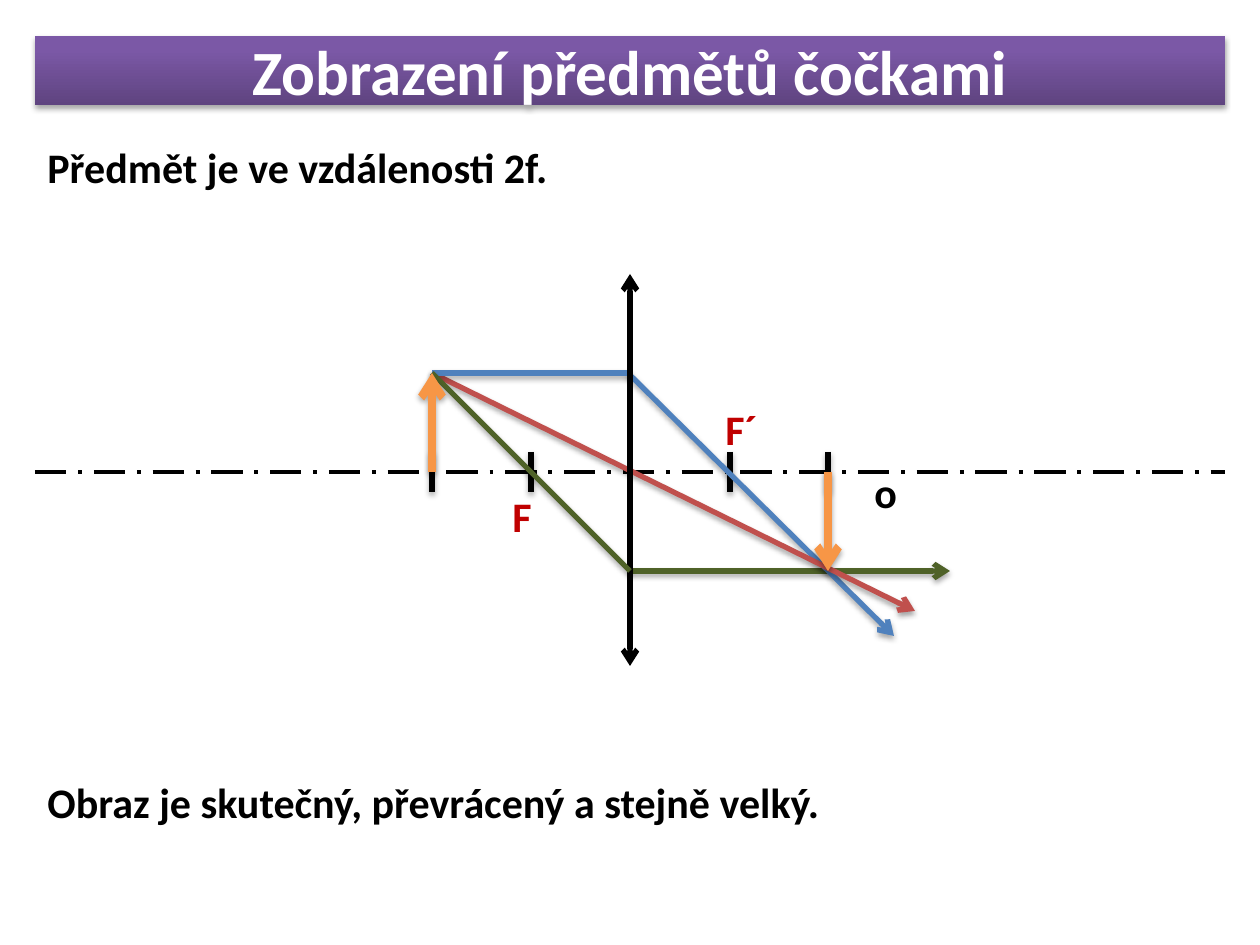
from lxml import etree
from pptx import Presentation, util as u
from pptx.dml.color import RGBColor
from pptx.enum import dml, shapes, text
from pptx.oxml.ns import qn

BLACK = RGBColor(0x00, 0x00, 0x00)
WHITE = RGBColor(0xFF, 0xFF, 0xFF)
DARK = RGBColor(0x5F, 0x44, 0x80)
PURPLE = RGBColor(0x7B, 0x58, 0xA6)
CRIMSON = RGBColor(0xC0, 0x00, 0x00)
GREEN = RGBColor(0x4F, 0x62, 0x28)
BLUE = RGBColor(0x4F, 0x81, 0xBD)
RED = RGBColor(0xC0, 0x50, 0x4D)
ORANGE = RGBColor(0xF7, 0x96, 0x46)

LEFT, WIDE = 35, 1190
AXIS, LENS = 472, 630
FOCUS, HIGH, TICK = 99, 99, 20
OBJ, IMG = LENS - 2 * FOCUS, LENS + 2 * FOCUS
TOP, LOW = AXIS - HIGH, AXIS + HIGH


def px(n):
    return u.Emu(round(n * 914400 / 126))


class Board:
    font = "Calibri"

    def __init__(self, deck):
        self.slide = deck.slides.add_slide(deck.slide_layouts[5])

    def effect(self, shape, shadow):
        """Give the shape a soft shadow below it, or none at all."""
        props = shape.element.spPr
        group = etree.SubElement(props, qn("a:effectLst"))
        if shadow:
            outer = etree.SubElement(group, qn("a:outerShdw"), blurRad="40000",
                                     dist="23000", dir="5400000", rotWithShape="0")
            tint = etree.SubElement(outer, qn("a:srgbClr"), val="000000")
            etree.SubElement(tint, qn("a:alpha"), val="35000")

    def letter(self, frame, words, size, color):
        frame.text = words
        font = frame.paragraphs[0].font
        font.name, font.size, font.bold = self.font, u.Pt(size), True
        font.color.rgb = color

    def title(self, words, x, y, w, h):
        bar = self.slide.shapes.title
        bar.left, bar.top, bar.width, bar.height = map(px, (x, y, w, h))
        bar.fill.gradient()
        bar.fill.gradient_angle = 90
        for stop, place, color in zip(bar.fill.gradient_stops, (0, 0.8), (DARK, PURPLE)):
            stop.position = place
            stop.color.rgb = color
        self.effect(bar, True)
        frame = bar.text_frame
        self.letter(frame, words, 36, WHITE)
        frame.auto_size = text.MSO_AUTO_SIZE.NONE
        frame.vertical_anchor = text.MSO_ANCHOR.MIDDLE
        frame.paragraphs[0].alignment = text.PP_ALIGN.CENTER

    def label(self, words, x, y, w=64, color=BLACK):
        box = self.slide.shapes.add_textbox(px(x), px(y), px(w), px(63))
        box.text_frame.word_wrap = True
        box.text_frame.auto_size = text.MSO_AUTO_SIZE.SHAPE_TO_FIT_TEXT
        self.letter(box.text_frame, words, 24, color)

    def line(self, start, end, color=BLACK, width=3, ends=(), dash=None, shadow=True):
        """Draw a line; ends lists where arrowheads go: headEnd, tailEnd."""
        line = self.slide.shapes.add_connector(
            shapes.MSO_CONNECTOR.STRAIGHT, *map(px, (*start, *end)))
        line.line.color.rgb = color
        line.line.width = u.Pt(width)
        if dash:
            line.line.dash_style = dash
        stroke = line.element.spPr.find(qn("a:ln"))
        for tag in ends:
            etree.SubElement(stroke, qn("a:" + tag), type="arrow")
        self.effect(line, shadow)

    def arrow(self, start, end, color, width=3):
        self.line(start, end, color, width, ends=("tailEnd",))

    def tick(self, x):
        self.line((x, AXIS - TICK), (x, AXIS + TICK))


def main():
    deck = Presentation()
    deck.slide_width, deck.slide_height = u.Inches(10), u.Inches(7.5)
    board = Board(deck)

    board.title("Zobrazení předmětů čočkami", LEFT, 36, WIDE, 69)
    board.label("Předmět je ve vzdálenosti 2f.", LEFT, 135, WIDE)
    board.line((LEFT, AXIS), (LEFT + WIDE, AXIS), width=2.25,
               dash=dml.MSO_LINE.LONG_DASH_DOT, shadow=False)
    board.tick(LENS + FOCUS + 1)
    board.label("F", 500, 484, color=CRIMSON)

    board.arrow((LENS, LOW), (950, LOW), GREEN)
    board.arrow((LENS - 2, TOP), (894, 636), BLUE)
    board.arrow((OBJ, TOP), (915, 611), RED)
    board.label("o", 862, 460)
    board.line((OBJ, TOP), (LENS, TOP), BLUE)
    board.line((LENS, 666), (LENS, 274), ends=("headEnd", "tailEnd"), shadow=False)
    board.label("F´", 713, 397, color=CRIMSON)
    board.tick(LENS - FOCUS)
    board.line((OBJ, TOP), (LENS, LOW), GREEN)

    board.tick(OBJ)
    board.tick(IMG)
    board.arrow((IMG, AXIS), (IMG, LOW), ORANGE, 4.5)
    board.label("Obraz je skutečný, převrácený a stejně velký.", LEFT, 770, WIDE)
    board.arrow((OBJ, AXIS), (OBJ, TOP), ORANGE, 4.5)
    deck.save("out.pptx")


if __name__ == "__main__":
    main()
